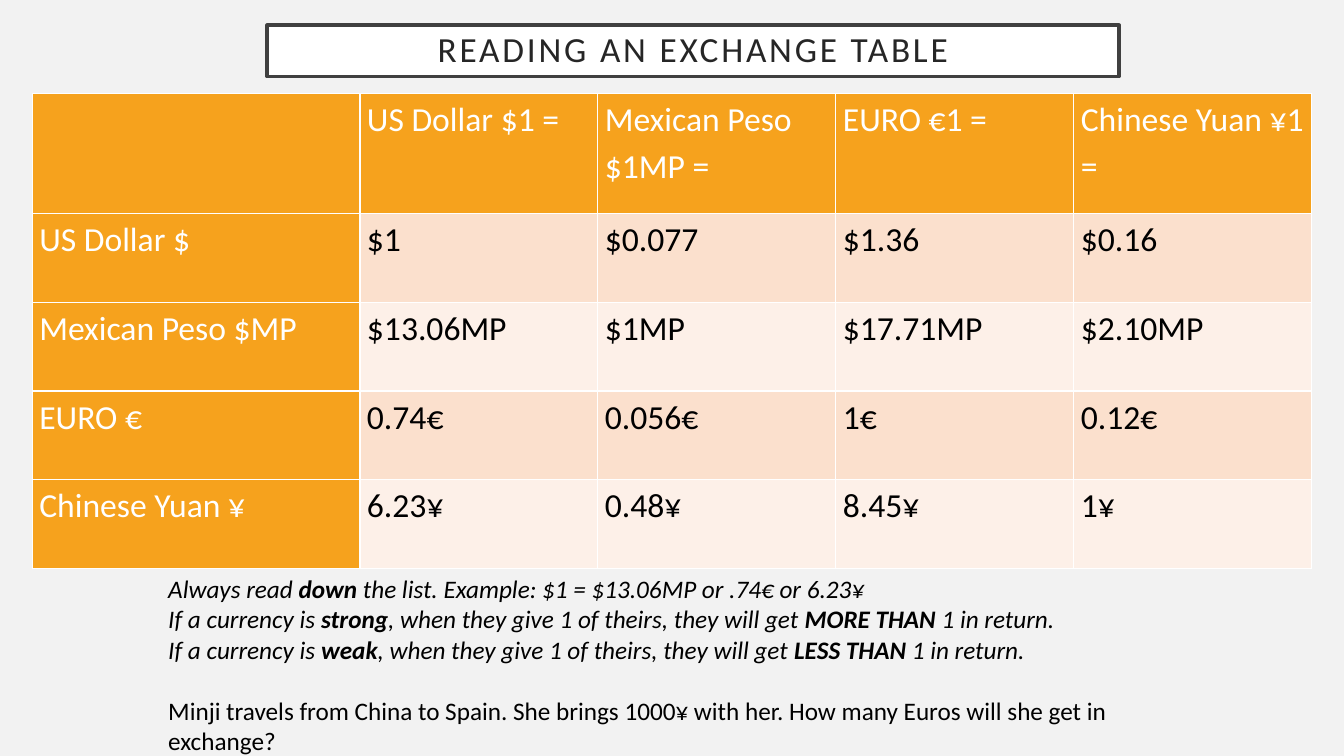
"""Build a slide that shows how to read a currency exchange table."""
from lxml import etree
from pptx import Presentation
from pptx.dml.color import RGBColor
from pptx.enum.shapes import MSO_SHAPE
from pptx.enum.text import MSO_ANCHOR, PP_ALIGN
from pptx.oxml.ns import qn
from pptx.util import Inches, Pt

RECT = MSO_SHAPE.RECTANGLE
MIDDLE = MSO_ANCHOR.MIDDLE
LEFT, CENTER = PP_ALIGN.LEFT, PP_ALIGN.CENTER
WIDE, HIGH = Inches(13.33), Inches(7.5)
FONT = "Calibri"
HUES = {"back": "F2F2F2", "white": "FFFFFF", "frame": "404040", "title": "262626",
        "head": "F6A21D", "odd": "FBE0CD", "even": "FDF0E8", "black": "000000"}
TONES = {name: RGBColor.from_string(code) for name, code in HUES.items()}


def write(para, text, size=18, hue="black", italic=False, align=LEFT,
          lead=1.0, gap=0, track=0):
    """Fill a paragraph; parts between asterisks are bold."""
    para.alignment = align
    para.line_spacing = lead
    para.space_before = Pt(gap)
    for index, part in enumerate(text.split("*")):
        run = para.add_run()
        run.text = part
        font = run.font
        font.name, font.size = FONT, Pt(size)
        font.bold, font.italic = index % 2 == 1, italic
        font.color.rgb = TONES[hue]
        if track:
            font._element.set("spc", str(track * 100))


deck = Presentation()
deck.slide_width, deck.slide_height = WIDE, HIGH
slide = deck.slides.add_slide(deck.slide_layouts[6])
slide.background.fill.solid()
slide.background.fill.fore_color.rgb = TONES["back"]

title = slide.shapes.add_shape(RECT, Inches(2.65), Inches(0.25), Inches(8.45), Inches(0.51))
title.shadow.inherit = False
title.fill.solid()
title.fill.fore_color.rgb = TONES["white"]
title.line.color.rgb = TONES["frame"]
title.line.width = Pt(2.5)
frame = title.text_frame
frame.vertical_anchor = MIDDLE
frame.margin_top = frame.margin_bottom = 0
write(frame.paragraphs[0], "READING AN EXCHANGE TABLE", size=25.2, hue="title",
      align=CENTER, lead=0.9, track=2)

rates = [
    ["", "US Dollar $1 =", "Mexican Peso $1MP =", "EURO €1 =", "Chinese Yuan ¥1 ="],
    ["US Dollar $", "$1", "$0.077", "$1.36", "$0.16"],
    ["Mexican Peso $MP", "$13.06MP", "$1MP", "$17.71MP", "$2.10MP"],
    ["EURO €", "0.74€", "0.056€", "1€", "0.12€"],
    ["Chinese Yuan ¥", "6.23¥", "0.48¥", "8.45¥", "1¥"],
]
widths = [3.25] + [2.36] * 4
heights = [1.19] + [0.88] * 4
grid = slide.shapes.add_table(len(heights), len(widths), Inches(0.32), Inches(0.93),
                              Inches(sum(widths)), Inches(sum(heights))).table
grid.first_row = grid.horz_banding = False
for column, width in zip(grid.columns, widths):
    column.width = Inches(width)
for row, height in zip(grid.rows, heights):
    row.height = Inches(height)

for r, line in enumerate(rates):
    for c, text in enumerate(line):
        cell = grid.cell(r, c)
        head = r == 0 or c == 0
        cell.margin_left = cell.margin_right = Inches(0.07)
        cell.margin_top = cell.margin_bottom = 0
        for side in ("lnL", "lnR", "lnT", "lnB"):
            edge = etree.SubElement(cell._tc.tcPr, qn(f"a:{side}"), w=str(Pt(1)))
            fill = etree.SubElement(edge, qn("a:solidFill"))
            etree.SubElement(fill, qn("a:srgbClr"), val=HUES["white"])
        cell.fill.solid()
        cell.fill.fore_color.rgb = TONES["head" if head else "odd" if r % 2 else "even"]
        write(cell.text_frame.paragraphs[0], text, size=24,
              hue="white" if head else "black", lead=1.15)

top = Inches(5.64)
notes = slide.shapes.add_textbox(Inches(1.57), top, Inches(10.61), HIGH - top).text_frame
notes.word_wrap = True
rules = [
    "Always read *down* the list. Example: $1 = $13.06MP or .74€ or 6.23¥",
    "If a currency is *strong*, when they give 1 of theirs, they will get *MORE THAN* 1 in return.",
    "If a currency is *weak*, when they give 1 of theirs, they will get *LESS THAN* 1 in return.",
]
for index, rule in enumerate(rules):
    para = notes.add_paragraph() if index else notes.paragraphs[0]
    write(para, rule, italic=True)
write(notes.add_paragraph(), "Minji travels from China to Spain. She brings 1000¥ with her. "
      "How many Euros will she get in exchange?", gap=22)

deck.save("out.pptx")
